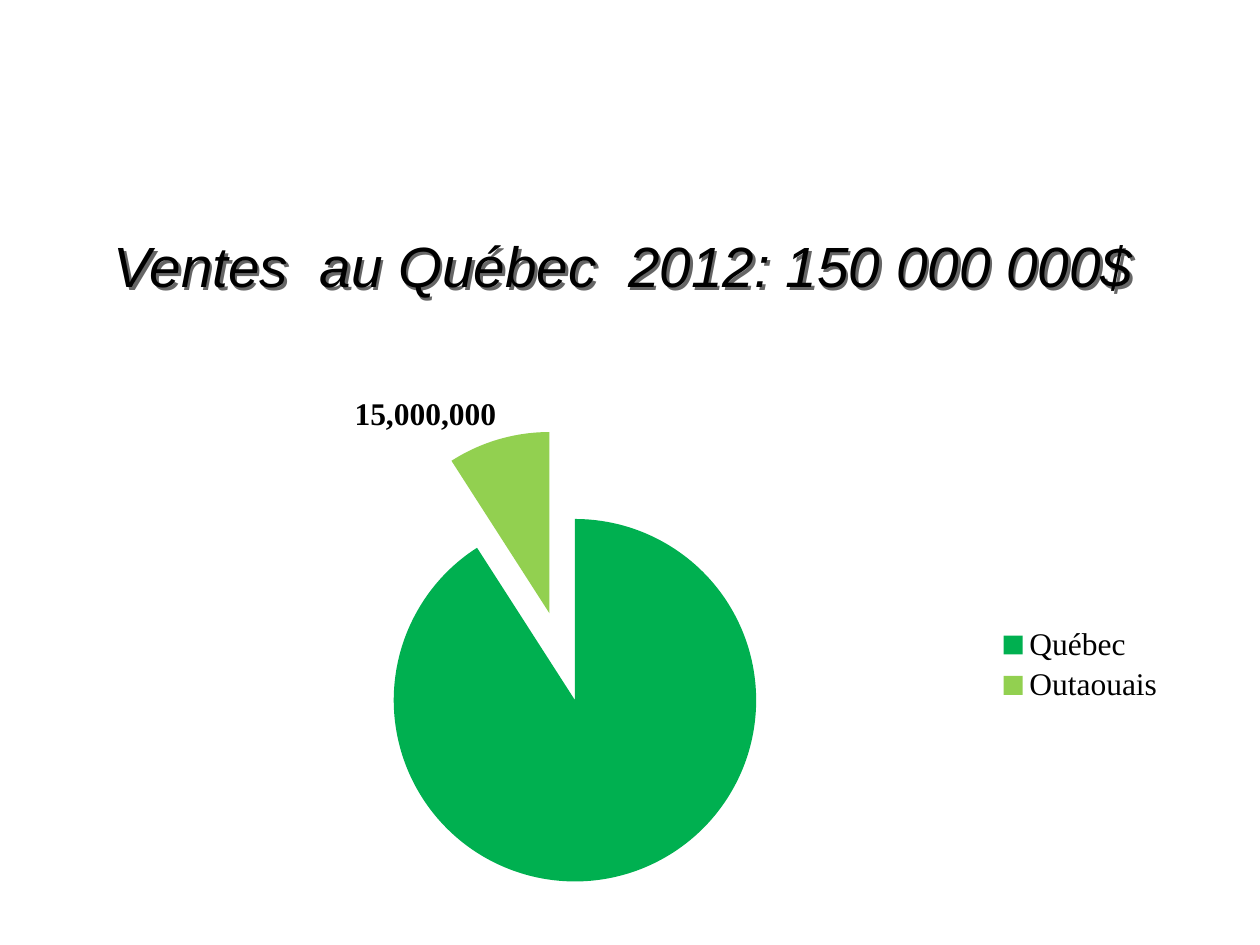
from pptx import Presentation
from pptx.chart.data import CategoryChartData
from pptx.dml.color import RGBColor
from pptx.enum.chart import XL_CHART_TYPE as ChartType
from pptx.enum.chart import XL_LABEL_POSITION as LabelPosition
from pptx.enum.chart import XL_LEGEND_POSITION as LegendPosition
from pptx.enum.text import MSO_ANCHOR as Anchor
from pptx.enum.text import PP_ALIGN as Align
from pptx.oxml import parse_xml
from pptx.oxml.ns import nsdecls
from pptx.util import Inches, Pt

REGION_SALES = {"Québec": 150000000, "Outaouais": 15000000}
REGION_COLORS = ["00B050", "92D050"]
PLOT_LAYOUT = {"x": 0.08, "y": 0.08, "w": 0.69, "h": 0.81}


def color(value):
    return RGBColor.from_string(value)


def style_font(font, name, size):
    font.name = name
    font.size = Pt(size)
    font.color.rgb = color("000000")


def add_text_shadow(title, shade):
    title.element.spPr.append(parse_xml(
        f'<a:effectLst {nsdecls("a")}>'
        f'<a:outerShdw dist="{Inches(0.03)}" dir="2700000" algn="tl" rotWithShape="0">'
        f'<a:srgbClr val="{shade}"/></a:outerShdw></a:effectLst>'))


def add_title(slide, text):
    title = slide.shapes.add_textbox(Inches(0.75), Inches(1.48), Inches(8.5), Inches(1.25))
    frame = title.text_frame
    frame.word_wrap = True
    frame.vertical_anchor = Anchor.MIDDLE
    frame.margin_right = Inches(0.2)
    heading = frame.paragraphs[0]
    heading.text = text
    heading.alignment = Align.CENTER
    style_font(heading.font, "Arial", 32.4)
    heading.font.italic = True
    add_text_shadow(title, "666666")


def place_plot(chart):
    edges = "".join(f'<c:{edge} val="{share}"/>' for edge, share in PLOT_LAYOUT.items())
    plot_area = chart.element.xpath("c:chart/c:plotArea")[0]
    for layout in plot_area.xpath("c:layout"):
        plot_area.remove(layout)
    plot_area.insert(0, parse_xml(
        f'<c:layout {nsdecls("c")}><c:manualLayout><c:layoutTarget val="inner"/>'
        f'<c:xMode val="edge"/><c:yMode val="edge"/>{edges}</c:manualLayout></c:layout>'))


def explode_slices(chart, percent):
    first_slice = chart.element.xpath(".//c:ser/c:dPt")[0]
    first_slice.addprevious(parse_xml(f'<c:explosion {nsdecls("c")} val="{percent}"/>'))


def hide_label(chart, index):
    labels = chart.element.xpath(".//c:ser/c:dLbls")[0]
    labels.insert(0, parse_xml(
        f'<c:dLbl {nsdecls("c")}><c:idx val="{index}"/><c:delete val="1"/></c:dLbl>'))


def add_sales_pie(slide):
    sales = CategoryChartData()
    sales.categories = list(REGION_SALES)
    sales.add_series("Series 1", list(REGION_SALES.values()))
    chart = slide.shapes.add_chart(
        ChartType.PIE, Inches(0.85), Inches(3.06), Inches(8.5), Inches(4.44), sales).chart
    style_font(chart.font, "Times New Roman", 18)
    chart.has_title = False
    chart.has_legend = True
    chart.legend.position = LegendPosition.RIGHT
    chart.legend.include_in_layout = False
    chart.plots[0].vary_by_categories = True

    series = chart.plots[0].series[0]
    for index, fill_color in enumerate(REGION_COLORS):
        region = series.points[index].format
        region.fill.solid()
        region.fill.fore_color.rgb = color(fill_color)
        region.line.fill.background()

    labels = series.data_labels
    labels.show_value = True
    labels.number_format = "#,##0"
    labels.number_format_is_linked = False
    labels.position = LabelPosition.OUTSIDE_END
    style_font(labels.font, "Times New Roman", 18)
    labels.font.bold = True

    hide_label(chart, 0)
    explode_slices(chart, 25)
    place_plot(chart)


def main():
    deck = Presentation()
    deck.slide_width = Inches(10)
    deck.slide_height = Inches(7.5)
    slide = deck.slides.add_slide(deck.slide_layouts[6])
    add_title(slide, "Ventes  au Québec  2012: 150 000 000$")
    add_sales_pie(slide)
    deck.save("out.pptx")


if __name__ == "__main__":
    main()
